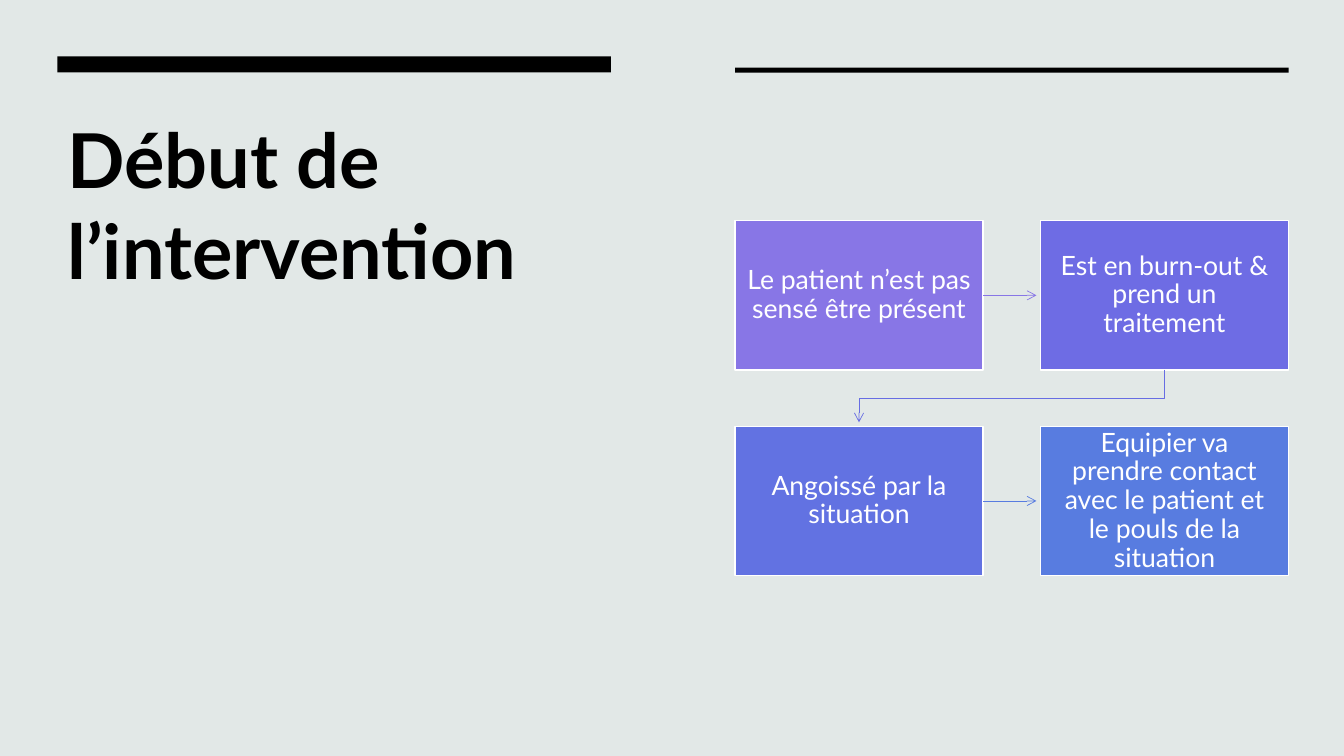
from dataclasses import dataclass

from lxml import etree
from pptx import Presentation
from pptx import util as u
from pptx.dml.color import RGBColor
from pptx.enum import shapes, text
from pptx.oxml.ns import qn

PX = 9144
FONT = "Lato"
BLACK, WHITE, BACKGROUND = "000000", "FFFFFF", "E2E8E7"
LEFT, TOP = 729, 219
BOX_WIDTH, BOX_HEIGHT = 246, 148
COLUMN_STEP, ROW_STEP = 303, 204
ARROW_GAP = 4


@dataclass(frozen=True)
class Bar:
    left: int
    top: int
    height: int


@dataclass(frozen=True)
class Step:
    wording: str
    color: str
    column: int
    row: int

    @property
    def left(self) -> int:
        return LEFT + self.column * COLUMN_STEP

    @property
    def top(self) -> int:
        return TOP + self.row * ROW_STEP

    @property
    def center(self) -> int:
        return self.left + BOX_WIDTH // 2

    @property
    def middle(self) -> int:
        return self.top + BOX_HEIGHT // 2

    @property
    def bottom(self) -> int:
        return self.top + BOX_HEIGHT


BARS = [Bar(57, 56, 16), Bar(LEFT, 67, 5)]
STEPS = [
    Step("Le patient n’est pas sensé être présent", "8876E6", 0, 0),
    Step("Est en burn-out & prend un traitement", "6E6CE4", 1, 0),
    Step("Angoissé par la situation", "6272E2", 0, 1),
    Step("Equipier va prendre contact avec le patient et le pouls de la situation",
         "587CE0", 1, 1),
]


def px(length: int) -> u.Emu:
    return u.Emu(length * PX)


def paint(color_format, color: str) -> None:
    color_format.rgb = RGBColor.from_string(color)


def fill_solid(fill, color: str) -> None:
    fill.solid()
    paint(fill.fore_color, color)


def set_font(paragraph, size: int, color: str, bold: bool = False) -> None:
    paragraph.font.name = FONT
    paragraph.font.size = u.Pt(size)
    paragraph.font.bold = bold
    paint(paragraph.font.color, color)


def add_rectangle(slide, left: int, top: int, width: int, height: int, color: str):
    shape = slide.shapes.add_shape(
        shapes.MSO_SHAPE.RECTANGLE, px(left), px(top), px(width), px(height))
    shape.shadow.inherit = False
    fill_solid(shape.fill, color)
    shape.line.fill.background()
    return shape


def add_title(slide, wording: str) -> None:
    title = slide.shapes.title
    title.left, title.top, title.width, title.height = map(px, (57, 107, 549, 268))
    frame = title.text_frame
    frame.text = wording
    frame.word_wrap = True
    frame.auto_size = text.MSO_AUTO_SIZE.NONE
    frame.vertical_anchor = text.MSO_ANCHOR.TOP
    paragraph = frame.paragraphs[0]
    paragraph.alignment = text.PP_ALIGN.LEFT
    set_font(paragraph, 54, BLACK, bold=True)


def add_step(slide, step: Step):
    box = add_rectangle(slide, step.left, step.top, BOX_WIDTH, BOX_HEIGHT, step.color)
    fill_solid(box.line.fill, WHITE)
    box.line.width = u.Pt(1)
    frame = box.text_frame
    frame.text = step.wording
    frame.word_wrap = True
    frame.vertical_anchor = text.MSO_ANCHOR.MIDDLE
    frame.margin_left = frame.margin_right = px(12)
    frame.margin_top = frame.margin_bottom = px(13)
    paragraph = frame.paragraphs[0]
    paragraph.alignment = text.PP_ALIGN.CENTER
    paragraph.line_spacing = 0.9
    set_font(paragraph, 19, WHITE)
    return box


def style_arrow(line, color: str) -> None:
    fill_solid(line.fill, color)
    line.width = u.Pt(0.5)
    etree.SubElement(line._get_or_add_ln(), qn("a:tailEnd"), type="arrow")


def add_straight_arrow(slide, box, start: Step, end: Step, color: str) -> None:
    connector = slide.shapes.add_connector(
        shapes.MSO_CONNECTOR.STRAIGHT, px(start.left + BOX_WIDTH), px(start.middle),
        px(end.left - ARROW_GAP), px(end.middle))
    connector.begin_connect(box, 3)
    style_arrow(connector.line, color)
    etree.SubElement(connector._element.spPr, qn("a:effectLst"))


def add_return_arrow(slide, start: Step, end: Step, color: str) -> None:
    turn = (start.bottom + end.top) // 2
    builder = slide.shapes.build_freeform(start.center, start.bottom, scale=PX)
    builder.add_line_segments(
        [(start.center, turn), (end.center, turn), (end.center, end.top - ARROW_GAP)],
        close=False)
    arrow = builder.convert_to_shape()
    arrow.shadow.inherit = False
    arrow.fill.background()
    style_arrow(arrow.line, color)


def main() -> None:
    presentation = Presentation()
    presentation.slide_width, presentation.slide_height = u.Inches(13.33), u.Inches(7.5)
    slide = presentation.slides.add_slide(presentation.slide_layouts[5])
    fill_solid(slide.background.fill, BACKGROUND)
    add_title(slide, "Début de l’intervention")
    for bar in BARS:
        add_rectangle(slide, bar.left, bar.top, 549, bar.height, BLACK)
    boxes = [add_step(slide, step) for step in STEPS]
    add_straight_arrow(slide, boxes[0], STEPS[0], STEPS[1], "8876E6")
    add_return_arrow(slide, STEPS[1], STEPS[2], "676DE3")
    add_straight_arrow(slide, boxes[2], STEPS[2], STEPS[3], "587CE0")
    presentation.save("out.pptx")


if __name__ == "__main__":
    main()
